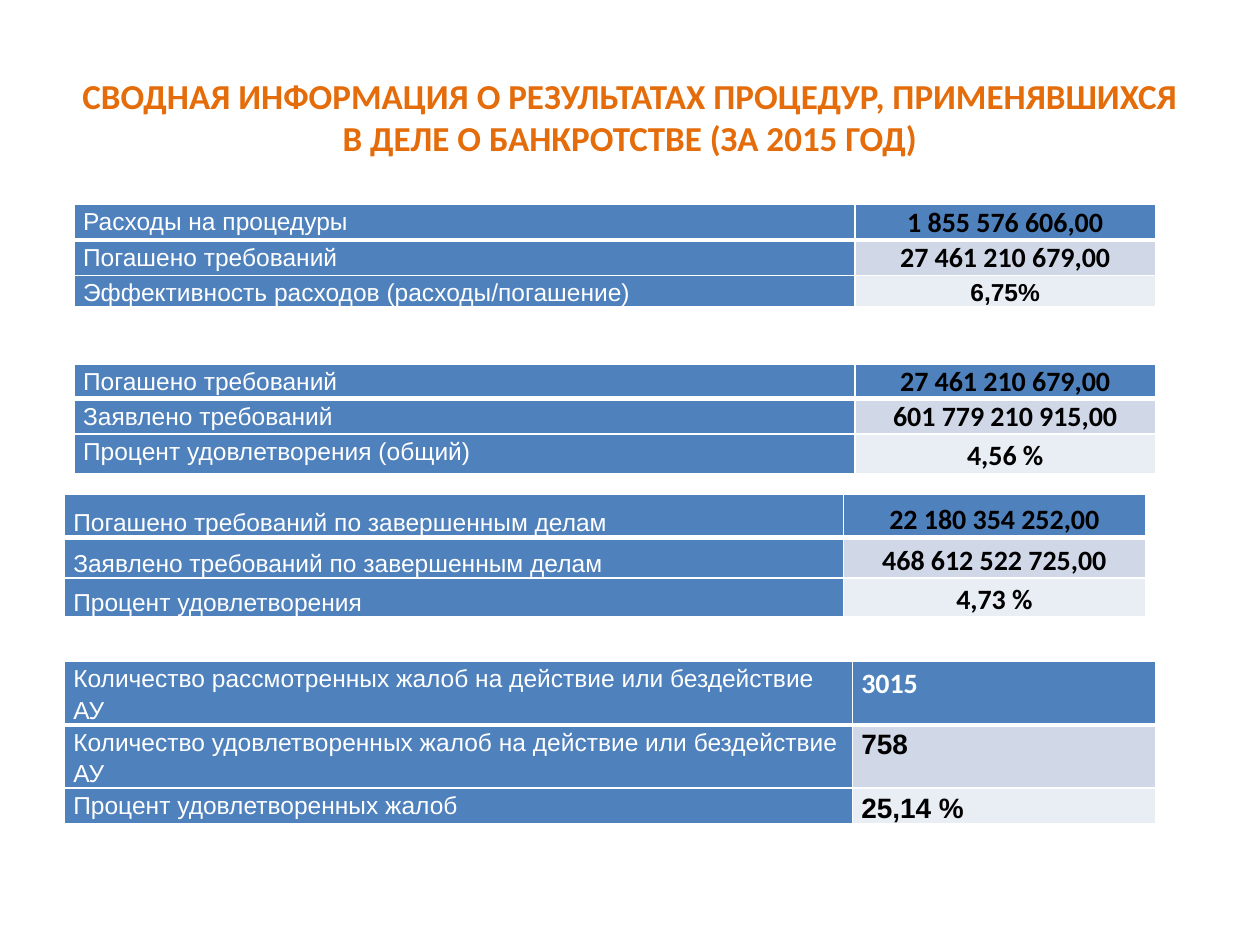
"""Build a slide with four summary tables on bankruptcy procedures."""
from dataclasses import dataclass

from lxml.etree import SubElement
from pptx import Presentation
from pptx.dml.color import RGBColor
from pptx.enum.text import MSO_ANCHOR as ANCHOR, PP_ALIGN as ALIGN
from pptx.oxml.ns import qn
from pptx.util import Pt

COLORS = {
    "title": "E46C0A",
    "blue": "4F81BD",
    "band": "D0D8E8",
    "pale": "E9EDF4",
    "white": "FFFFFF",
    "black": "000000",
}
VALUE_FILLS = ("blue", "band", "pale")
WIDE = (5, 0, 5, 0)
TIGHT = (0.7, 0.7, 0.7, 0)


@dataclass
class Value:
    text: str
    font: str = "Calibri"
    size: float = 16
    color: str = "black"
    align: ALIGN = ALIGN.CENTER
    anchor: ANCHOR = ANCHOR.TOP
    margins: tuple = WIDE
    spacing: float = 1.15


@dataclass
class Row:
    label: str
    value: Value
    height: float


@dataclass
class Summary:
    left: float
    top: float
    widths: tuple
    rows: list
    label_anchor: ANCHOR = ANCHOR.TOP


def amount(text: str, spacing: float = 1) -> Value:
    return Value(text, anchor=ANCHOR.BOTTOM, margins=TIGHT, spacing=spacing)


def count(text: str, font: str = "Arial", color: str = "black") -> Value:
    return Value(text, font=font, color=color, align=ALIGN.LEFT)


SUMMARIES = [
    Summary(42.5, 116.8, (446.2, 171.5), [
        Row("Расходы на процедуры", amount("1 855 576 606,00"), 20.3),
        Row("Погашено требований", amount("27 461 210 679,00"), 20.3),
        Row("Эффективность расходов (расходы/погашение)",
            Value("6,75%", font="Arial", size=14), 18),
    ]),
    Summary(42.5, 208.2, (446.2, 171.5), [
        Row("Погашено требований", Value("27 461 210 679,00", spacing=1), 19.6),
        Row("Заявлено требований", amount("601 779 210 915,00"), 20.2),
        Row("Процент удовлетворения (общий)", Value("4,56 %"), 22.2),
    ]),
    Summary(36.9, 282.5, (445, 172.7), [
        Row("Погашено требований по завершенным делам",
            amount("22 180 354 252,00", 1.15), 24.5),
        Row("Заявлено требований по завершенным делам",
            amount("468 612 522 725,00", 1.15), 22.6),
        Row("Процент удовлетворения",
            Value("4,73 %", anchor=ANCHOR.BOTTOM), 22.3),
    ], ANCHOR.BOTTOM),
    Summary(36.9, 378, (450.3, 173.2), [
        Row("Количество рассмотренных жалоб на действие или бездействие АУ",
            count("3015", "Calibri", "white"), 36),
        Row("Количество удовлетворенных жалоб на действие или бездействие АУ",
            count("758"), 36),
        Row("Процент удовлетворенных жалоб", count("25,14 %"), 20.5),
    ]),
]


def rgb(name: str) -> RGBColor:
    return RGBColor.from_string(COLORS[name])


def write(tf, text: str, *, font: str, size: float, color: str,
          bold: bool = False, align: ALIGN = ALIGN.LEFT,
          spacing: float = 1) -> None:
    p = tf.paragraphs[0]
    p.alignment, p.line_spacing = align, spacing
    r = p.add_run()
    r.text = text
    r.font.name, r.font.size, r.font.bold = font, Pt(size), bold
    r.font.color.rgb = rgb(color)


def style_cell(cell, fill: str, anchor: ANCHOR, margins: tuple,
               header: bool) -> None:
    tc_pr = cell._tc.get_or_add_tcPr()
    for side in "LRTB":
        width = 3 if header and side == "B" else 1
        ln = SubElement(tc_pr, qn(f"a:ln{side}"), w=str(Pt(width)))
        solid = SubElement(ln, qn("a:solidFill"))
        SubElement(solid, qn("a:srgbClr"), val=COLORS["white"])
    cell.fill.solid()
    cell.fill.fore_color.rgb = rgb(fill)
    cell.vertical_anchor = anchor
    (cell.margin_left, cell.margin_top,
     cell.margin_right, cell.margin_bottom) = map(Pt, margins)


def draw_summary(s, summary: Summary) -> None:
    rows = summary.rows
    height = sum(row.height for row in rows)
    table = s.shapes.add_table(
        len(rows), 2, Pt(summary.left), Pt(summary.top),
        Pt(sum(summary.widths)), Pt(height)).table
    for column, width in zip(table.columns, summary.widths):
        column.width = Pt(width)
    for i, (row, fill) in enumerate(zip(rows, VALUE_FILLS)):
        table.rows[i].height = Pt(row.height)
        label, value = table.cell(i, 0), table.cell(i, 1)
        v = row.value
        style_cell(label, "blue", summary.label_anchor, WIDE, i == 0)
        write(label.text_frame, row.label, font="Arial", size=14,
              color="white", spacing=1.15)
        style_cell(value, fill, v.anchor, v.margins, i == 0)
        write(value.text_frame, v.text, font=v.font, size=v.size,
              color=v.color, bold=True, align=v.align, spacing=v.spacing)


def main() -> None:
    prs = Presentation()
    prs.slide_width, prs.slide_height = Pt(720), Pt(540)
    s = prs.slides.add_slide(prs.slide_layouts[5])
    title = s.shapes.title
    title.left, title.top = Pt(36), Pt(21.6)
    title.width, title.height = Pt(648), Pt(90)
    title.text_frame.vertical_anchor = ANCHOR.MIDDLE
    write(title.text_frame,
          "СВОДНАЯ ИНФОРМАЦИЯ О РЕЗУЛЬТАТАХ ПРОЦЕДУР, ПРИМЕНЯВШИХСЯ "
          "В ДЕЛЕ О БАНКРОТСТВЕ (ЗА 2015 ГОД)",
          font="Calibri", size=20, color="title", bold=True,
          align=ALIGN.CENTER)
    for summary in SUMMARIES:
        draw_summary(s, summary)
    prs.save("out.pptx")


if __name__ == "__main__":
    main()
